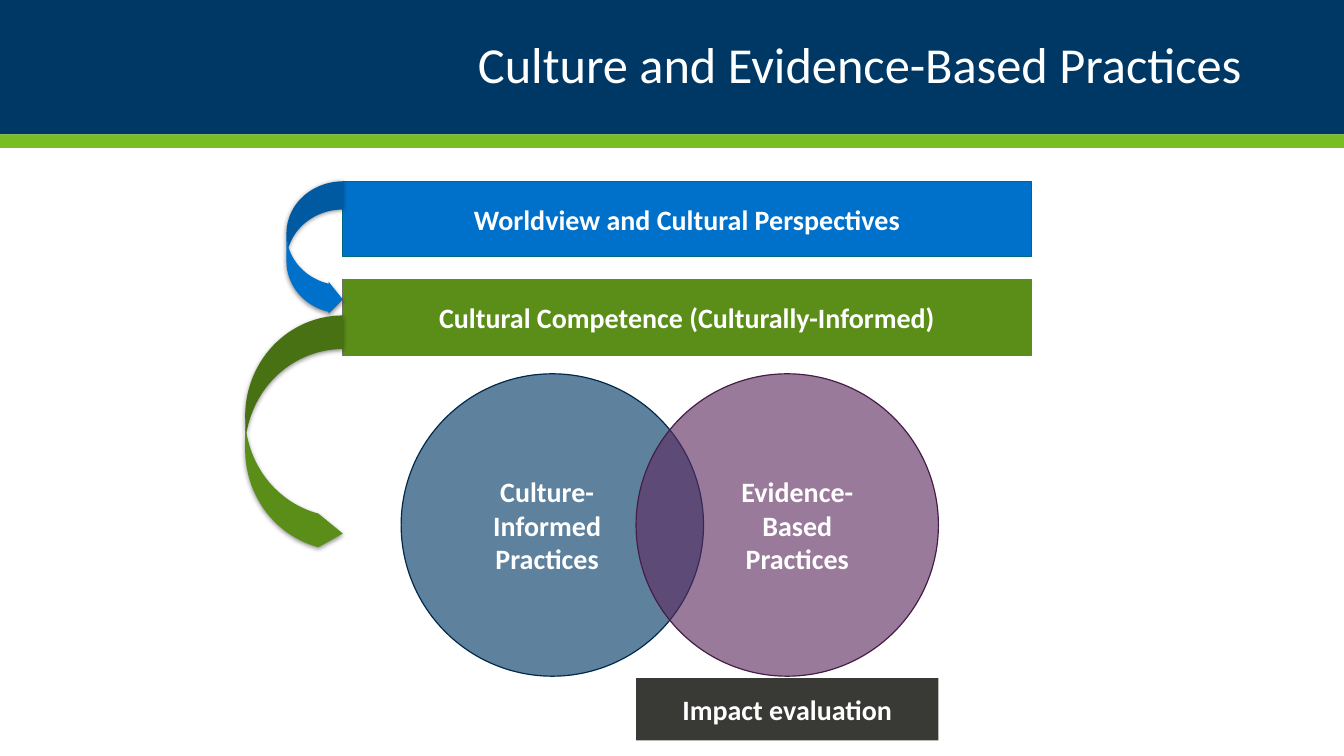
from lxml import etree
from pptx import Presentation
from pptx.dml.color import RGBColor
from pptx.enum.shapes import MSO_SHAPE
from pptx.enum.text import MSO_ANCHOR, PP_ALIGN
from pptx.oxml.ns import qn
from pptx.util import Cm, Pt

RECT, OVAL = MSO_SHAPE.RECTANGLE, MSO_SHAPE.OVAL
CURVED_ARROW = MSO_SHAPE.CURVED_RIGHT_ARROW
MIDDLE, CENTER, RIGHT = MSO_ANCHOR.MIDDLE, PP_ALIGN.CENTER, PP_ALIGN.RIGHT

# Content; lengths in cm
TITLE = "Culture and Evidence-Based Practices"
BANDS = [("003865", 3.39), ("78BE21", 0.34)]  # fill, height
BARS = [  # text, fill, outline
    ("Worldview and Cultural Perspectives", "0071CB", "00697E"),
    ("Cultural Competence (Culturally-Informed)", "5A8E19", "727269"),
]
CIRCLES = [  # text, fill, opacity %, outline, left inset, right inset
    ("Culture-Informed Practices", "003865", 63, "00294B", 0.25, 0.51),
    ("Evidence-Based Practices", "5D295F", 62, "451E46", 0.76, 0.25),
]
ARROWS = [  # fill, top, width, height, adjustments
    ("0071CB", 4.57, 1.42, 3.38, (0.5, 0.566, 0.25)),
    ("5A8E19", 7.95, 2.46, 5.92, (0.42, 0.344, 0.25)),
]
EVALUATION = ("Impact evaluation", "393935")

SLIDE_W, SLIDE_H = 33.87, 19.05
BAR_LEFT, BAR_TOP, BAR_W, BAR_H, BAR_STEP = 8.64, 4.57, 17.35, 1.9, 2.48
CIRCLE_LEFT, CIRCLE_TOP, DIAMETER, CIRCLE_STEP = 10.11, 9.42, 7.62, 5.92
EVALUATION_TOP, EVALUATION_H = 17.09, 1.57


def color(hex_value):
    return RGBColor.from_string(hex_value)


def write(shape, text, size=20, bold=True, align=CENTER, left=0.25, right=0.25, spacing=1.0):
    frame = shape.text_frame
    frame.word_wrap = True
    frame.vertical_anchor = MIDDLE
    frame.margin_left, frame.margin_right = Cm(left), Cm(right)
    paragraph = frame.paragraphs[0]
    paragraph.alignment = align
    paragraph.line_spacing = spacing
    run = paragraph.add_run()
    run.text = text
    run.font.name, run.font.size, run.font.bold = "Calibri", Pt(size), bold
    run.font.color.rgb = color("FFFFFF")


def add_filled(kind, left, top, width, height, fill, outline=None):
    shape = slide.shapes.add_shape(kind, Cm(left), Cm(top), Cm(width), Cm(height))
    shape.shadow.inherit = False
    shape.fill.solid()
    shape.fill.fore_color.rgb = color(fill)
    if outline:
        shape.line.color.rgb = color(outline)
        shape.line.width = Pt(0.85)
    else:
        shape.line.fill.background()
    return shape


def set_opacity(parent, percent):
    """Add an alpha value to the colour inside a fill or an effect."""
    rgb = parent.find(".//" + qn("a:srgbClr"))
    etree.SubElement(rgb, qn("a:alpha"), val=str(percent * 1000))


def add_soft_shadow(shape):
    effects = shape._element.spPr.find(qn("a:effectLst"))
    shadow = etree.SubElement(
        effects, qn("a:outerShdw"), blurRad=str(Pt(3.5)), dist=str(Pt(1.1)),
        dir="5400000", rotWithShape="0")
    etree.SubElement(shadow, qn("a:srgbClr"), val="000000")
    set_opacity(shadow, 45)


deck = Presentation()
deck.slide_width, deck.slide_height = Cm(SLIDE_W), Cm(SLIDE_H)
slide = deck.slides.add_slide(deck.slide_layouts[6])

band_top = 0
for fill, height in BANDS:
    add_filled(RECT, 0, band_top, SLIDE_W, height, fill)
    band_top += height

title = slide.shapes.add_textbox(Cm(2.34), Cm(0.43), Cm(29.21), Cm(2.54))
write(title, TITLE, size=36, bold=False, align=RIGHT, spacing=0.9)

for row, (text, fill, outline) in enumerate(BARS):
    bar = add_filled(RECT, BAR_LEFT, BAR_TOP + row * BAR_STEP, BAR_W, BAR_H, fill, outline)
    write(bar, text)

for column, (text, fill, opacity, outline, left, right) in enumerate(CIRCLES):
    circle = add_filled(OVAL, CIRCLE_LEFT + column * CIRCLE_STEP, CIRCLE_TOP,
                        DIAMETER, DIAMETER, fill, outline)
    set_opacity(circle._element.spPr.find(qn("a:solidFill")), opacity)
    write(circle, text, left=left, right=right)

for fill, top, width, height, adjustments in ARROWS:
    arrow = add_filled(CURVED_ARROW, BAR_LEFT - width, top, width, height, fill)
    for index, value in enumerate(adjustments):
        arrow.adjustments[index] = value
    add_soft_shadow(arrow)

evaluation_text, evaluation_fill = EVALUATION
evaluation = add_filled(RECT, CIRCLE_LEFT + CIRCLE_STEP, EVALUATION_TOP,
                        DIAMETER, EVALUATION_H, evaluation_fill)
write(evaluation, evaluation_text)

deck.save("out.pptx")
